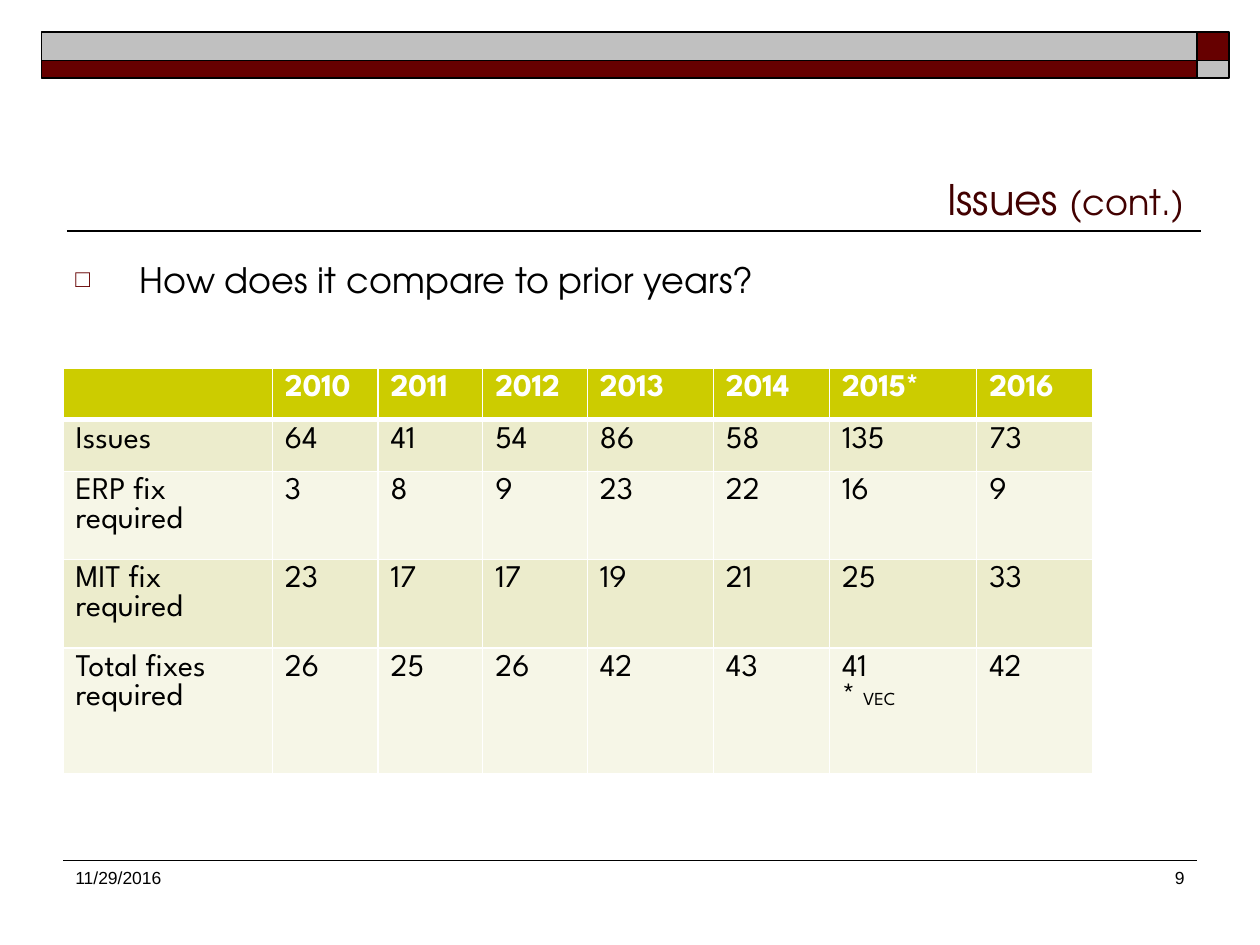
from dataclasses import dataclass

from lxml.etree import SubElement
from pptx import Presentation
from pptx.dml.color import RGBColor
from pptx.enum.shapes import MSO_CONNECTOR, MSO_SHAPE
from pptx.enum.text import MSO_ANCHOR, MSO_AUTO_SIZE, PP_ALIGN
from pptx.oxml import parse_xml
from pptx.oxml.ns import nsdecls, qn
from pptx.util import Cm, Pt


@dataclass(frozen=True)
class Theme:
    """Colours, fonts and type sizes of the slide."""
    maroon: str = "660000"
    silver: str = "C0C0C0"
    title: str = "420000"
    ink: str = "000000"
    white: str = "FFFFFF"
    header: str = "CCCC00"
    bands: tuple = ("ECECCC", "F6F6E7")
    display_font: str = "TeX Gyre Adventor"
    table_font: str = "League Spartan"
    footer_font: str = "Arial"
    title_size: float = 24
    body_size: float = 20
    table_size: float = 18
    note_size: float = 10.5
    footer_size: float = 10


THEME = Theme()
COLUMN_WIDTHS = [4.22, 2.13, 2.11, 2.11, 2.54, 2.34, 2.97, 2.34]
ROW_HEIGHTS = [1.04, 1.04, 1.78, 1.78, 2.54]
ROWS = [
    ["", "2010", "2011", "2012", "2013", "2014", "2015*", "2016"],
    ["Issues", "64", "41", "54", "86", "58", "135", "73"],
    ["ERP fix required", "3", "8", "9", "23", "22", "16", "9"],
    ["MIT fix required", "23", "17", "17", "19", "21", "25", "33"],
    ["Total fixes required", "26", "25", "26", "42", "43", "41", "42"],
]


def add_run(paragraph, text, font, size, color, bold=False):
    """Append one formatted run to a paragraph."""
    run = paragraph.add_run()
    run.text = text
    run.font.name = font
    run.font.size = Pt(size)
    run.font.bold = bold
    run.font.color.rgb = RGBColor.from_string(color)


def add_rule(slide, left, top, width, weight):
    """Draw a horizontal black rule."""
    rule = slide.shapes.add_connector(
        MSO_CONNECTOR.STRAIGHT, Cm(left), Cm(top), Cm(left + width), Cm(top))
    rule.line.color.rgb = RGBColor.from_string(THEME.ink)
    rule.line.width = Pt(weight)
    SubElement(rule._element.spPr, qn("a:effectLst"))


def add_text_box(slide, left, top, width, height):
    """Add a wrapping text box and return its first paragraph."""
    frame = slide.shapes.add_textbox(Cm(left), Cm(top), Cm(width), Cm(height)).text_frame
    frame.word_wrap = True
    return frame.paragraphs[0]


def add_banner(slide, left, top, width, height):
    """Draw the two-row banner with its contrasting end blocks."""
    end_width, upper_height = 0.64, 0.58
    columns = [(left, width - end_width), (left + width - end_width, end_width)]
    rows = [(top, upper_height), (top + upper_height, height - upper_height)]
    for row_index, (y, block_height) in enumerate(rows):
        for column_index, (x, block_width) in enumerate(columns):
            block = slide.shapes.add_shape(
                MSO_SHAPE.RECTANGLE, Cm(x), Cm(y), Cm(block_width), Cm(block_height))
            color = THEME.silver if row_index == column_index else THEME.maroon
            block.shadow.inherit = False
            block.fill.solid()
            block.fill.fore_color.rgb = RGBColor.from_string(color)
            block.line.color.rgb = RGBColor.from_string(THEME.ink)
            block.line.width = Pt(1)


def add_title(slide, left, top, width, height):
    """Place the right-aligned title with the rule beneath it."""
    title = slide.shapes.title
    title.left, title.top, title.width, title.height = map(Cm, (left, top, width, height))
    frame = title.text_frame
    frame.auto_size = MSO_AUTO_SIZE.NONE
    frame.vertical_anchor = MSO_ANCHOR.BOTTOM
    paragraph = frame.paragraphs[0]
    paragraph.alignment = PP_ALIGN.RIGHT
    for text, size in (("Issues ", THEME.title_size), ("(cont.)", THEME.body_size)):
        add_run(paragraph, text, THEME.display_font, size, THEME.title)
    add_rule(slide, left + 0.08, top + height, width, 1)


def add_question(slide, left, top, width, height):
    """Place the bulleted question."""
    paragraph = add_text_box(slide, left, top, width, height)
    properties = paragraph._p.get_or_add_pPr()
    properties.set("marL", str(Cm(1.3)))
    properties.set("indent", str(-Cm(1.3)))
    color = SubElement(properties, qn("a:buClr"))
    SubElement(color, qn("a:srgbClr"), val=THEME.maroon)
    SubElement(properties, qn("a:buSzPct"), val="70000")
    SubElement(properties, qn("a:buFont"), typeface=THEME.footer_font)
    SubElement(properties, qn("a:buChar"), char="□")
    add_run(paragraph, "How does it compare to prior years?",
            THEME.display_font, THEME.body_size, THEME.ink)


def set_borders(cell, top, bottom):
    """Give a cell white borders with the given top and bottom weights."""
    properties = cell._tc.get_or_add_tcPr()
    weights = {"lnL": 1, "lnR": 1, "lnT": top, "lnB": bottom}
    for position, (tag, weight) in enumerate(weights.items()):
        properties.insert(position, parse_xml(
            f'<a:{tag} {nsdecls("a")} w="{Pt(weight)}"><a:solidFill>'
            f'<a:srgbClr val="{THEME.white}"/></a:solidFill></a:{tag}>'))


def add_issue_table(slide, left, top):
    """Build the table of issues and fixes by year."""
    table = slide.shapes.add_table(
        len(ROWS), len(COLUMN_WIDTHS), Cm(left), Cm(top),
        Cm(sum(COLUMN_WIDTHS)), Cm(sum(ROW_HEIGHTS))).table
    table.horz_banding = False
    for column, width in zip(table.columns, COLUMN_WIDTHS):
        column.width = Cm(width)
    for row_index, values in enumerate(ROWS):
        table.rows[row_index].height = Cm(ROW_HEIGHTS[row_index])
        is_header = row_index == 0
        fill = THEME.header if is_header else THEME.bands[(row_index - 1) % 2]
        color = THEME.white if is_header else THEME.ink
        for column_index, value in enumerate(values):
            cell = table.cell(row_index, column_index)
            cell.fill.solid()
            cell.fill.fore_color.rgb = RGBColor.from_string(fill)
            set_borders(cell, 3 if row_index == 1 else 1, 3 if is_header else 1)
            if value:
                add_run(cell.text_frame.paragraphs[0], value, THEME.table_font,
                        THEME.table_size, color, is_header)
    note = table.cell(len(ROWS) - 1, ROWS[0].index("2015*")).text_frame.add_paragraph()
    for text, size in (("* ", THEME.table_size), ("VEC", THEME.note_size)):
        add_run(note, text, THEME.table_font, size, THEME.ink)


def add_footer(slide, left, top, width, height):
    """Place the footer rule, date and slide number."""
    add_rule(slide, left, top, width, 0.75)
    half = width / 2
    entries = [("11/29/2016", left, PP_ALIGN.LEFT), ("9", left + half, PP_ALIGN.RIGHT)]
    for text, x, alignment in entries:
        paragraph = add_text_box(slide, x, top, half, height)
        paragraph.alignment = alignment
        add_run(paragraph, text, THEME.footer_font, THEME.footer_size, THEME.ink)


def main():
    """Build and save the slide."""
    presentation = Presentation()
    presentation.slide_width, presentation.slide_height = Cm(25.4), Cm(19.05)
    slide = presentation.slides.add_slide(presentation.slide_layouts[5])
    add_banner(slide, 0.84, 0.64, 23.93, 0.94)
    add_title(slide, 1.27, 1.47, 22.86, 3.18)
    add_question(slide, 1.27, 5.08, 22.86, 11.94)
    add_issue_table(slide, 1.27, 7.42)
    add_footer(slide, 1.27, 17.35, 22.86, 1.27)
    presentation.save("out.pptx")


if __name__ == "__main__":
    main()
